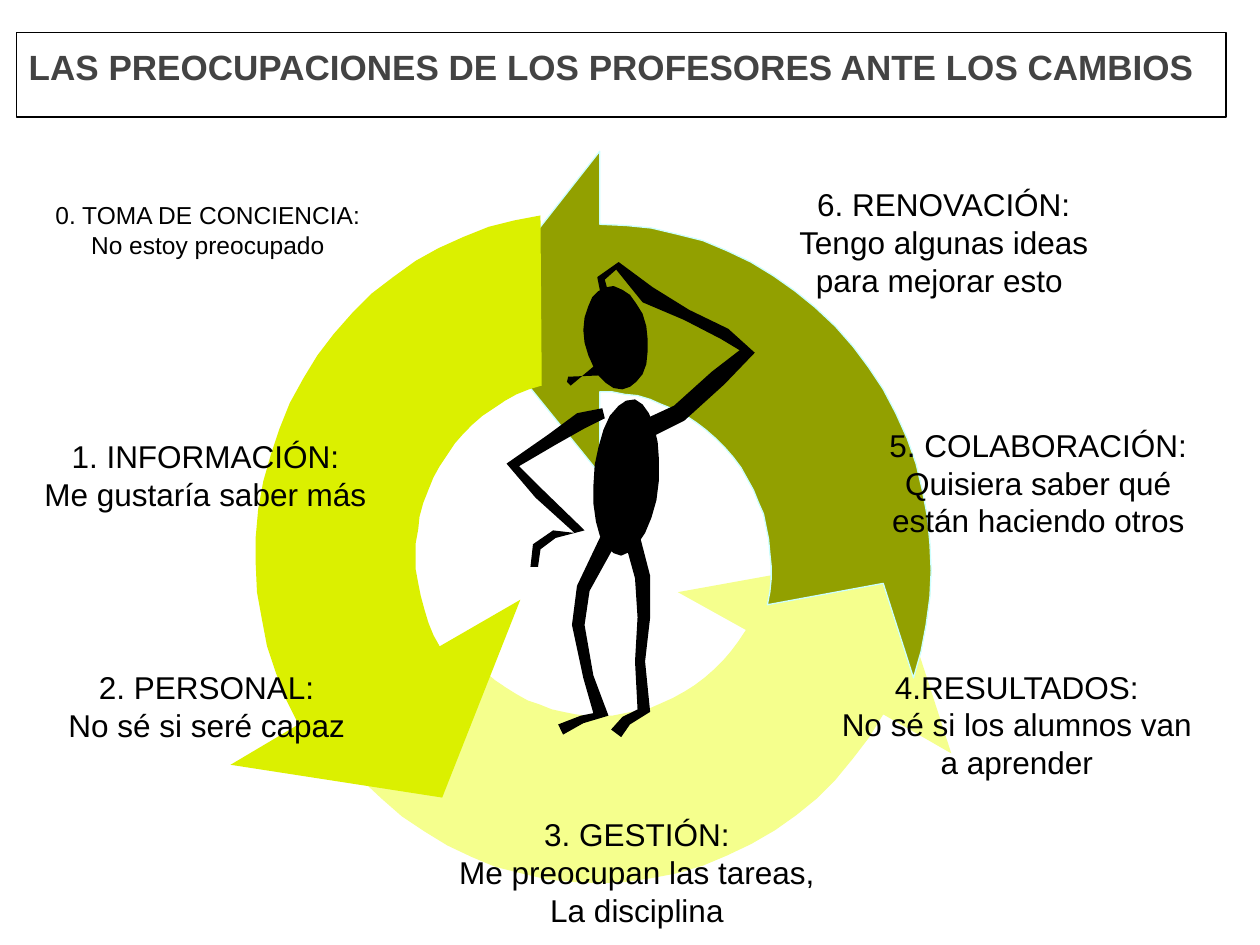
from math import cos, hypot, radians, sin

from pptx import Presentation
from pptx.dml.color import RGBColor
from pptx.enum.shapes import MSO_SHAPE
from pptx.enum.text import MSO_ANCHOR, PP_ALIGN
from pptx.util import Pt

PX = 9144  # EMU per px, 100 px to the inch
FONT = "Arial"
COLORS = {
    "paper": "FFFFFF",
    "ink": "000000",
    "title": "434343",
    "pale": "F5FF8D",
    "olive": "92A000",
    "lime": "DBF000",
    "edge": "CCFFFF",
}
OUTER = (263, 273)
INNER = (136, 140)

# fill, edge, center, outer sweep, arrow corners, inner sweep, tail corners
CYCLE = [
    ("pale", None, (475, 428), (140, 30.6),
     [(755, 598), (704, 440), (538, 470)], (31, 131), []),
    ("olive", "edge", (476, 451), (-90, 18.5),
     [(701, 463)], (12, -90), [(476, 376), (374, 250), (476, 120)]),
    ("lime", None, (466, 441), (262, 150.7),
     [(183, 607), (351, 633), (413, 476)], (149, 254.6), []),
]

# Each limb runs along its joints: x, y, thickness
LIMBS = {
    "arm on hip": [
        (479, 328, 8), (461, 334, 14), (438, 349, 10), (407, 369, 11),
        (428, 392, 8), (460, 422, 8), (440, 424, 7), (426, 434, 8), (424, 450, 7)],
    "right leg": [
        (502, 428, 12), (510, 458, 12), (511, 490, 11), (508, 525, 8),
        (511, 564, 10), (497, 572, 8), (489, 582, 9)],
    "left leg": [
        (483, 428, 14), (463, 467, 11), (459, 496, 11), (467, 537, 9),
        (477, 567, 12), (462, 571, 7), (445, 579, 9)],
    "raised arm": [
        (512, 341, 16), (539, 328, 14), (570, 300, 14), (593, 279, 12),
        (575, 265, 10), (545, 250, 10), (514, 234, 14), (490, 211, 7),
        (477, 221, 7), (480, 234, 7)],
}

# left, top, width, height, wraps, font size, lines
CAPTIONS = [
    (32, 154, 266, 57, False, 14, ["0. TOMA DE CONCIENCIA:", "No estoy preocupado"]),
    (24, 342, 278, 71, False, 18, ["1. INFORMACIÓN:", "Me gustaría saber más"]),
    (43, 525, 242, 71, False, 18, ["2. PERSONAL:", "No sé si seré capaz"]),
    (353, 642, 305, 101, False, 18,
     ["3. GESTIÓN:", "Me preocupan las tareas,", "La disciplina"]),
    (658, 525, 298, 100, True, 18,
     ["4.RESULTADOS:", "No sé si los alumnos van a aprender"]),
    (675, 333, 298, 100, True, 18,
     ["5. COLABORACIÓN:", "Quisiera saber qué están haciendo otros"]),
    (600, 142, 298, 100, True, 18,
     ["6. RENOVACIÓN:", "Tengo algunas ideas para mejorar esto "]),
]


def color(name):
    return RGBColor.from_string(COLORS[name])


def arc(center, radii, start, end, tilt=0, steps=24):
    """Points along an ellipse; degrees run clockwise from the right."""
    lean = radians(tilt)
    points = []
    for step in range(steps + 1):
        angle = radians(start + (end - start) * step / steps)
        x, y = radii[0] * cos(angle), radii[1] * sin(angle)
        points.append((round(center[0] + x * cos(lean) - y * sin(lean)),
                       round(center[1] + x * sin(lean) + y * cos(lean))))
    return points


def limb_outline(joints):
    """Set off half the thickness to both sides of the line through the joints."""
    one_side, other_side = [], []
    for i, (x, y, thickness) in enumerate(joints):
        before, after = joints[max(i - 1, 0)], joints[min(i + 1, len(joints) - 1)]
        run, rise = after[0] - before[0], after[1] - before[1]
        reach = thickness / 2 / hypot(run, rise)
        one_side.append((round(x - rise * reach), round(y + run * reach)))
        other_side.append((round(x + rise * reach), round(y - run * reach)))
    return one_side + other_side[::-1]


def paint(shape, fill, edge=None):
    shape.shadow.inherit = False
    shape.fill.solid()
    shape.fill.fore_color.rgb = color(fill)
    if edge:
        shape.line.color.rgb = color(edge)
        shape.line.width = Pt(0.75)
    else:
        shape.line.fill.background()


def add_outline(group, points, fill, edge=None):
    builder = group.shapes.build_freeform(*points[0], scale=PX)
    builder.add_line_segments(points[1:], close=True)
    paint(builder.convert_to_shape(), fill, edge)


def add_cycle(slide):
    cycle = slide.shapes.add_group_shape()
    for fill, edge, center, outer_sweep, arrow, inner_sweep, tail in CYCLE:
        outline = (arc(center, OUTER, *outer_sweep) + arrow
                   + arc(center, INNER, *inner_sweep) + tail)
        add_outline(cycle, outline, fill, edge)


def add_thinker(slide):
    thinker = slide.shapes.add_group_shape()
    nose = [(451, 299), (450, 303), (453, 306)]
    head = arc((489, 268), (25, 41), 151, 497, tilt=-9) + nose
    torso = arc((497, 379), (26, 62), 0, 345, tilt=5)
    limbs = [limb_outline(joints) for joints in LIMBS.values()]
    for part in [head, torso] + limbs:
        add_outline(thinker, part, "ink")


def write_lines(frame, lines, size, ink, align, bold=False):
    frame.text = "\n".join(lines)
    for paragraph in frame.paragraphs:
        paragraph.alignment = align
        paragraph.font.name = FONT
        paragraph.font.size = Pt(size)
        paragraph.font.bold = bold
        paragraph.font.color.rgb = color(ink)


def add_title(slide, text):
    banner = slide.shapes.add_shape(
        MSO_SHAPE.RECTANGLE, *(v * PX for v in (13, 26, 960, 67)))
    paint(banner, "paper", "ink")
    frame = banner.text_frame
    frame.word_wrap = True
    frame.vertical_anchor = MSO_ANCHOR.TOP
    frame.margin_left = frame.margin_right = 10 * PX
    frame.margin_top = frame.margin_bottom = 10 * PX
    write_lines(frame, [text], 20, "title", PP_ALIGN.LEFT, bold=True)


def add_caption(slide, left, top, width, height, wraps, size, lines):
    caption = slide.shapes.add_textbox(*(v * PX for v in (left, top, width, height)))
    caption.text_frame.word_wrap = wraps
    write_lines(caption.text_frame, lines, size, "ink", PP_ALIGN.CENTER)


def main():
    deck = Presentation()
    deck.slide_width, deck.slide_height = 1000 * PX, 750 * PX
    slide = deck.slides.add_slide(deck.slide_layouts[6])
    add_cycle(slide)
    add_title(slide, "LAS PREOCUPACIONES DE LOS PROFESORES ANTE LOS CAMBIOS")
    for caption in CAPTIONS:
        add_caption(slide, *caption)
    add_thinker(slide)
    deck.save("out.pptx")


if __name__ == "__main__":
    main()
